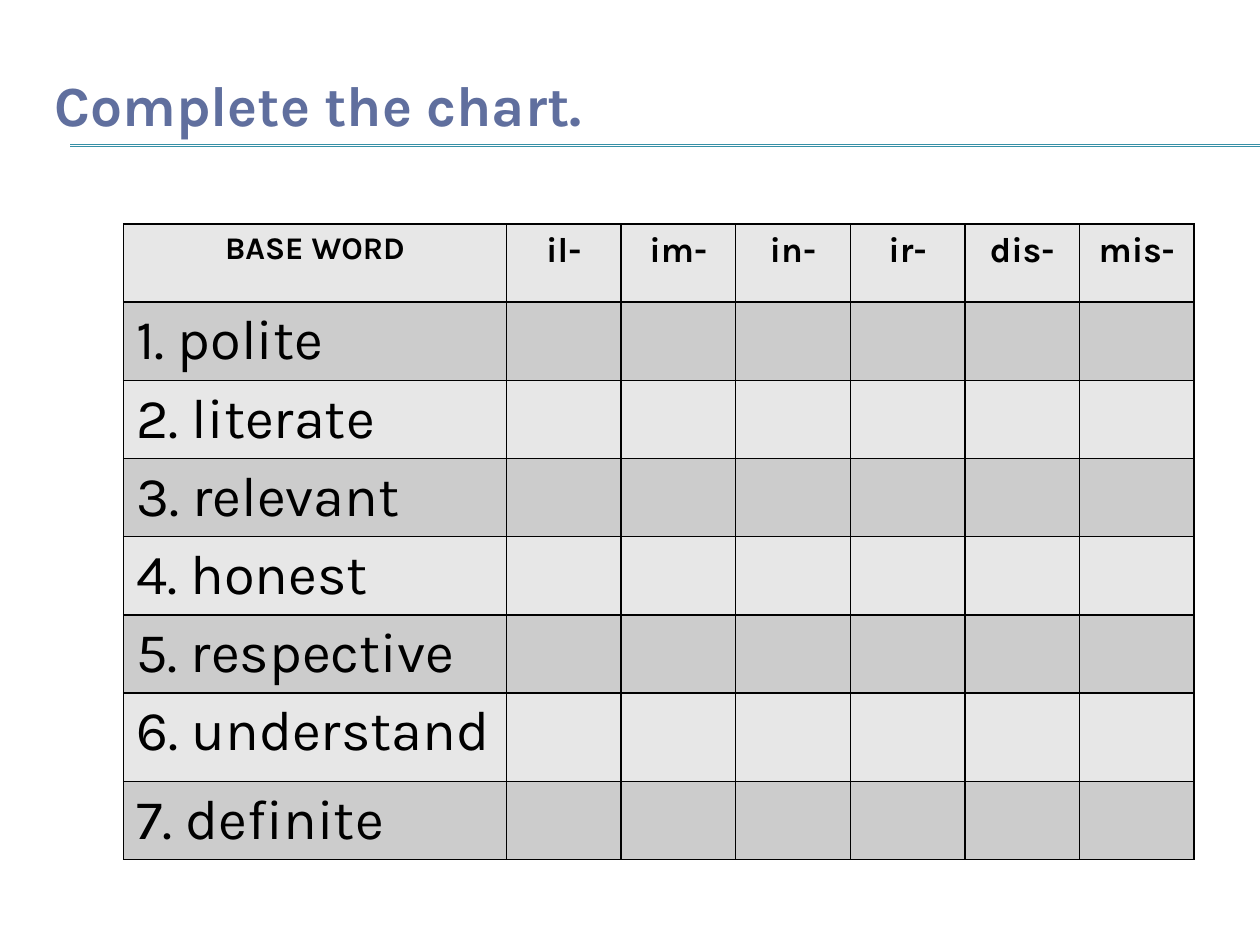
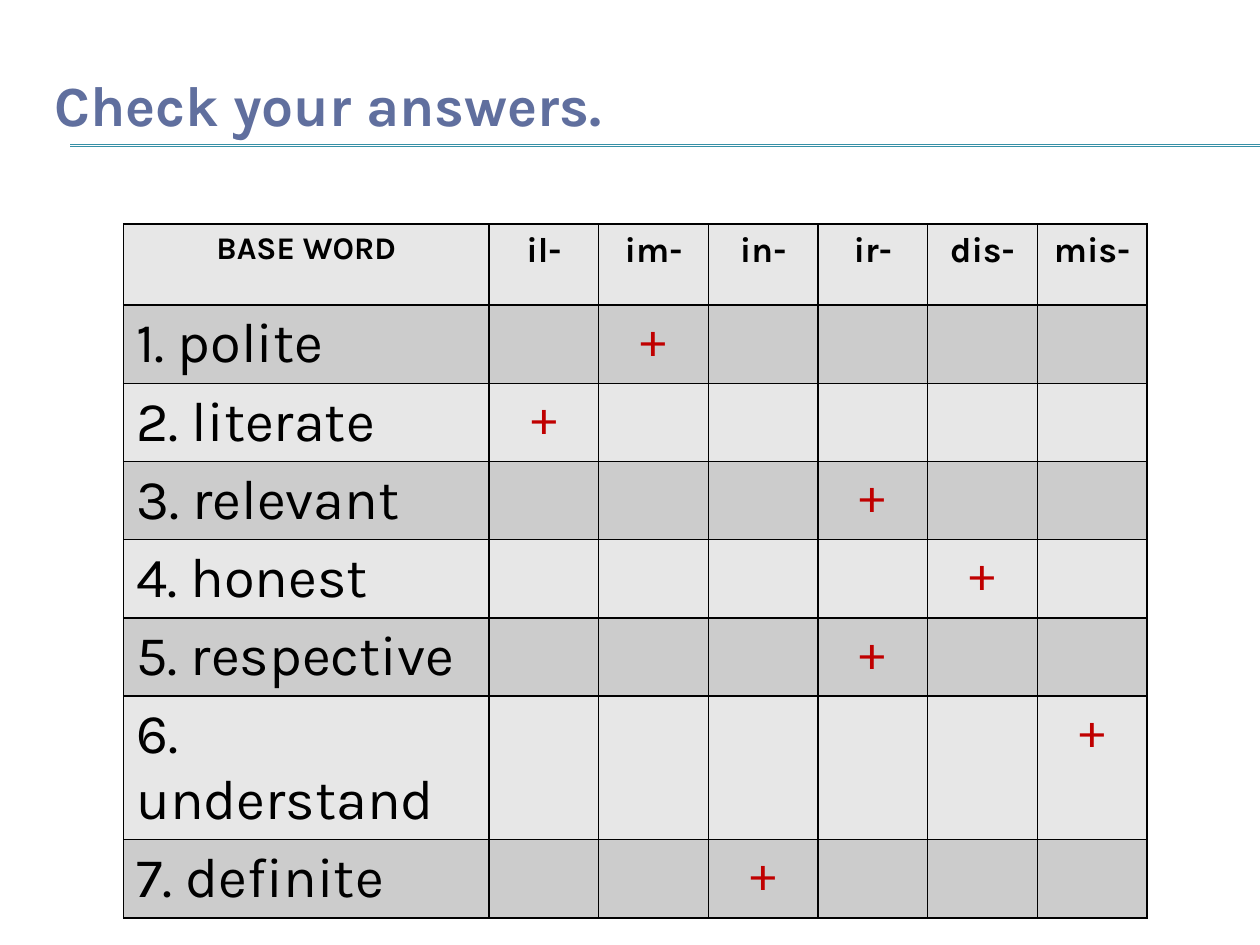
from dataclasses import dataclass

from lxml import etree
from pptx import Presentation
from pptx import util as u
from pptx.dml.color import RGBColor
from pptx.enum import shapes, text
from pptx.oxml.ns import qn


@dataclass(frozen=True)
class Theme:
    """Colours, font and type sizes shared by the slides."""
    font: str = "Karla"
    title: str = "606F9E"
    rule: str = "3891A7"
    ink: str = "000000"
    answer: str = "C00000"
    light_row: str = "E7E7E7"
    dark_row: str = "CCCCCC"
    title_size: float = 32.4
    heading_size: float = 18
    prefix_size: float = 20
    word_size: float = 32
    answer_size: float = 28


@dataclass(frozen=True)
class Box:
    """A region in centimetres."""
    left: float
    top: float
    width: float
    height: float


@dataclass(frozen=True)
class ChartSize:
    """Column widths and row heights of one chart, in centimetres."""
    word_column: float
    prefix_column: float
    header_row: float
    word_row: float
    tall_row: float


THEME = Theme()
SLIDE_WIDTH, SLIDE_HEIGHT = 25.4, 19.05
TITLE_BOX = Box(0.84, 1.27, 24.13, 1.65)
CHART_LEFT, CHART_TOP = 2.49, 4.52
PREFIXES = ["il-", "im-", "in-", "ir-", "dis-", "mis-"]
ANSWERS = {
    "polite": "im-",
    "literate": "il-",
    "relevant": "ir-",
    "honest": "dis-",
    "respective": "ir-",
    "understand": "mis-",
    "definite": "in-",
}
TALL_WORD = "understand"


def add_run(paragraph, words, size, color=THEME.ink, bold=False):
    """Add one formatted run to a paragraph."""
    run = paragraph.add_run()
    run.text = words
    run.font.name = THEME.font
    run.font.size = u.Pt(size)
    run.font.bold = bold
    run.font.color.rgb = RGBColor.from_string(color)


def add_title(slide, box, words):
    """Place the title and the double rule along the foot of its box."""
    title = slide.shapes.title
    title.left, title.top = u.Cm(box.left), u.Cm(box.top)
    title.width, title.height = u.Cm(box.width), u.Cm(box.height)
    title.text_frame.vertical_anchor = text.MSO_ANCHOR.MIDDLE
    paragraph = title.text_frame.paragraphs[0]
    paragraph.alignment = text.PP_ALIGN.LEFT
    add_run(paragraph, words, THEME.title_size, THEME.title, True)
    for offset in (0, 0.03):
        height = u.Cm(box.top + box.height + offset)
        rule = slide.shapes.add_connector(
            shapes.MSO_CONNECTOR.STRAIGHT,
            u.Cm(box.left + 0.58), height, u.Cm(SLIDE_WIDTH), height)
        rule.line.color.rgb = RGBColor.from_string(THEME.rule)
        rule.line.width = u.Pt(0.75)
        etree.SubElement(rule._element.spPr, qn("a:effectLst"))


def style_cell(cell, fill):
    """Give a cell its black borders and row fill."""
    properties = cell._tc.get_or_add_tcPr()
    for side in ("lnL", "lnR", "lnT", "lnB"):
        line = etree.SubElement(properties, qn(f"a:{side}"), w=str(u.Pt(1)))
        solid = etree.SubElement(line, qn("a:solidFill"))
        etree.SubElement(solid, qn("a:srgbClr"), val=THEME.ink)
    cell.fill.solid()
    cell.fill.fore_color.rgb = RGBColor.from_string(fill)


def write_cell(cell, words, size, color=THEME.ink, bold=False, centred=True):
    """Write one line of text in a cell."""
    paragraph = cell.text_frame.paragraphs[0]
    paragraph.alignment = text.PP_ALIGN.CENTER if centred else text.PP_ALIGN.LEFT
    add_run(paragraph, words, size, color, bold)


def add_prefix_chart(slide, left, top, size, show_answers):
    """Add the grid of base words and prefixes, with answers if wanted."""
    widths = [size.word_column] + [size.prefix_column] * len(PREFIXES)
    heights = [size.header_row] + [
        size.tall_row if word == TALL_WORD else size.word_row for word in ANSWERS]
    table = slide.shapes.add_table(
        len(heights), len(widths), u.Cm(left), u.Cm(top),
        u.Cm(sum(widths)), u.Cm(sum(heights))).table
    for column, width in zip(table.columns, widths):
        column.width = u.Cm(width)
    for index, (row, height) in enumerate(zip(table.rows, heights)):
        row.height = u.Cm(height)
        for cell in row.cells:
            style_cell(cell, THEME.dark_row if index % 2 else THEME.light_row)

    write_cell(table.cell(0, 0), "BASE WORD", THEME.heading_size, bold=True)
    for column, prefix in enumerate(PREFIXES, 1):
        write_cell(table.cell(0, column), prefix, THEME.prefix_size, bold=True)
    for row, (word, prefix) in enumerate(ANSWERS.items(), 1):
        write_cell(table.cell(row, 0), f"{row}. {word}", THEME.word_size, centred=False)
        if show_answers:
            answer_cell = table.cell(row, PREFIXES.index(prefix) + 1)
            write_cell(answer_cell, "+", THEME.answer_size, THEME.answer)


def add_chart_slide(presentation, title, size, show_answers):
    """Add a slide with a title above a prefix chart."""
    slide = presentation.slides.add_slide(presentation.slide_layouts[5])
    add_title(slide, TITLE_BOX, title)
    add_prefix_chart(slide, CHART_LEFT, CHART_TOP, size, show_answers)


def main():
    """Build the exercise and its answer slide."""
    presentation = Presentation()
    presentation.slide_width = u.Cm(SLIDE_WIDTH)
    presentation.slide_height = u.Cm(SLIDE_HEIGHT)
    add_chart_slide(presentation, "Complete the chart.",
                    ChartSize(7.72, 2.31, 1.57, 1.47, 1.78), False)
    add_chart_slide(presentation, "Check your answers.",
                    ChartSize(7.37, 2.21, 1.63, 1.45, 2.13), True)
    presentation.save("out.pptx")


if __name__ == "__main__":
    main()
